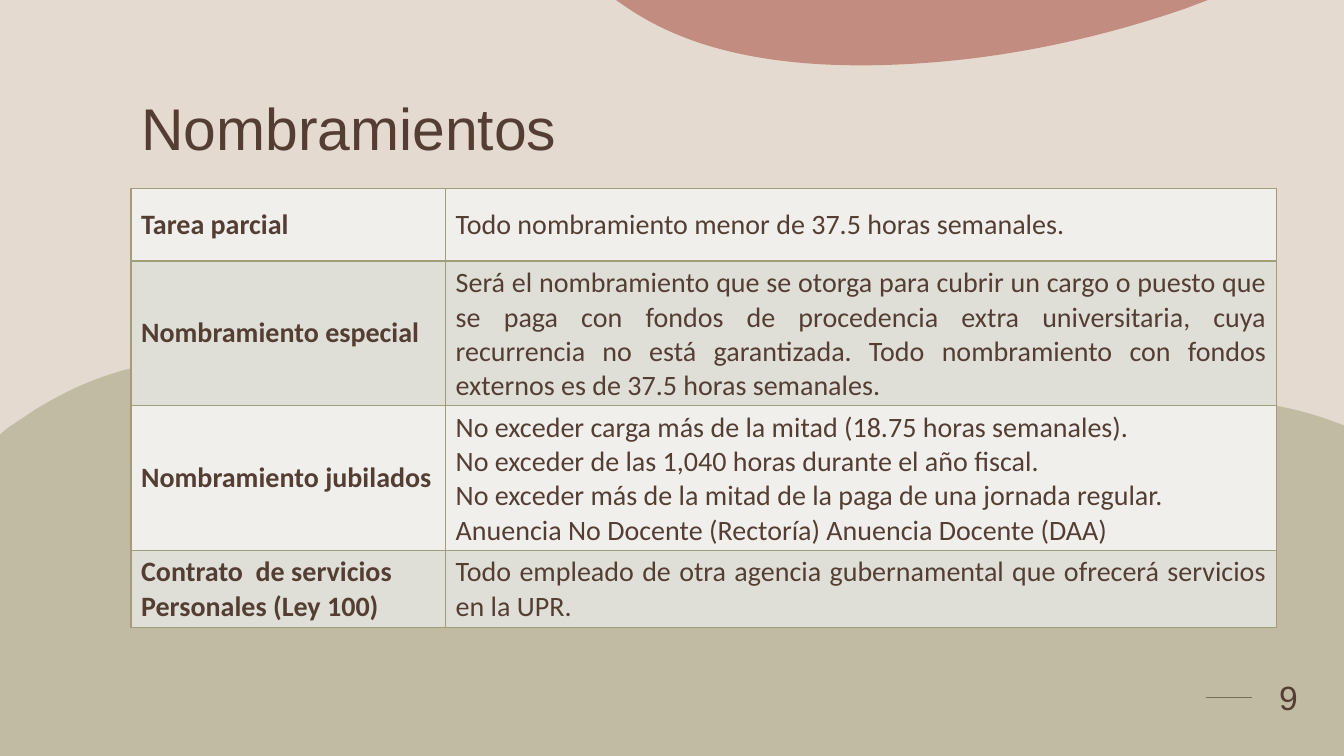
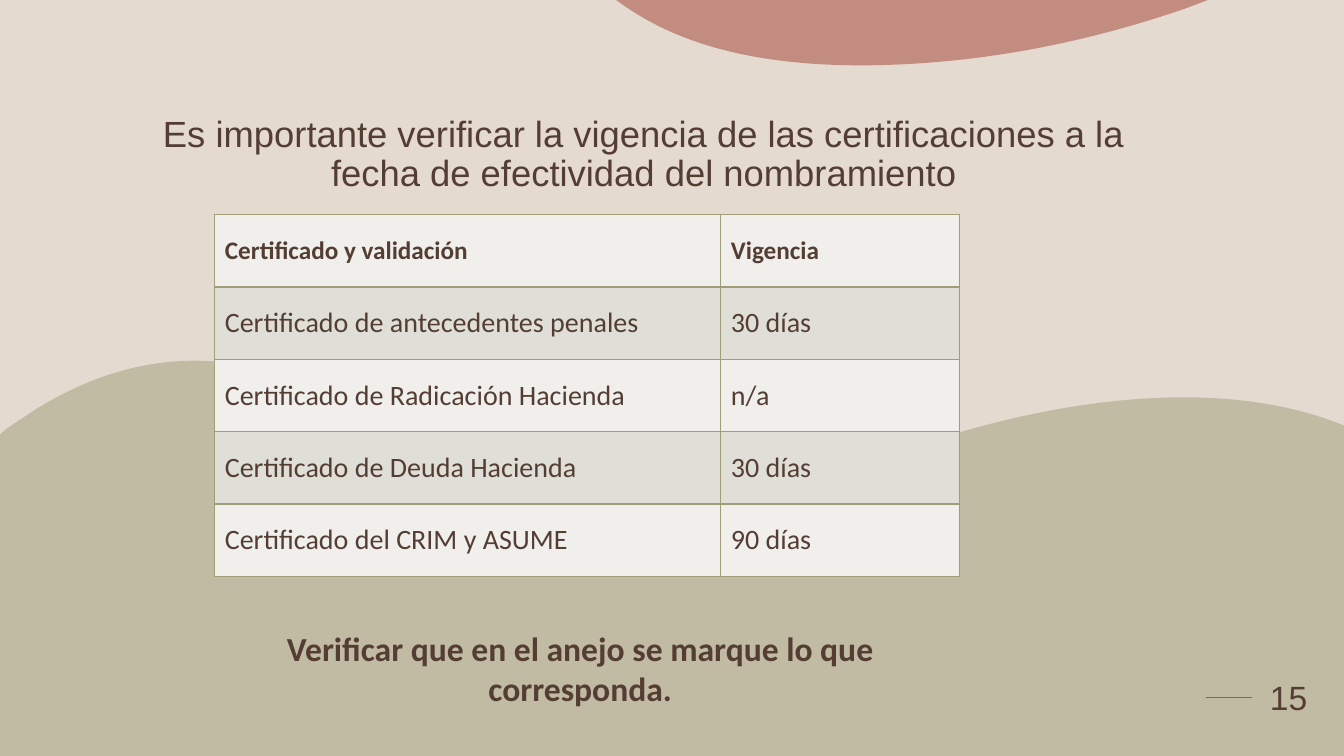
from dataclasses import dataclass

from lxml import etree
from pptx import Presentation
from pptx.dml.color import RGBColor
from pptx.enum.shapes import MSO_CONNECTOR
from pptx.enum.text import MSO_ANCHOR, MSO_AUTO_SIZE, PP_ALIGN
from pptx.oxml.ns import qn
from pptx.util import Inches, Pt

LEFT, CENTER, JUSTIFY = PP_ALIGN.LEFT, PP_ALIGN.CENTER, PP_ALIGN.JUSTIFY
TOP, MIDDLE, BOTTOM = MSO_ANCHOR.TOP, MSO_ANCHOR.MIDDLE, MSO_ANCHOR.BOTTOM
NO_AUTOFIT = MSO_AUTO_SIZE.NONE
STRAIGHT = MSO_CONNECTOR.STRAIGHT

SAND, BROWN, OLIVE, CLAY = "E5DACF", "543E34", "A09D79", "AC5B4C"
ROW_FILLS = ("F0EFEC", "DFDFD7")
HEADING_FONT, BODY_FONT = "Arial", "Calibri"
TITLE_ONLY = 5


@dataclass(frozen=True)
class Box:
    """Position and size in inches."""

    left: float
    top: float
    width: float
    height: float

    def emu(self) -> tuple:
        """Return the four lengths for python-pptx."""
        return tuple(Inches(v) for v in (self.left, self.top, self.width, self.height))


@dataclass(frozen=True)
class Style:
    """Look of a piece of text."""

    size: float
    font: str = BODY_FONT
    bold: bool = False
    align: PP_ALIGN = LEFT
    spacing: float = 1.0


@dataclass(frozen=True)
class Blob:
    """Closed outline: a start point, then line ends or cubic curves."""

    start: tuple
    segments: tuple
    height: float
    color: str
    opacity: int


@dataclass(frozen=True)
class Entry:
    """Text and style of one table cell."""

    text: str
    style: Style


LABEL = Style(20, bold=True)
PLAIN = Style(20)
JUSTIFIED = Style(20, align=JUSTIFY)
COLUMN_HEAD = Style(18, bold=True)
NUMBER = Style(24, HEADING_FONT, align=CENTER)
NOTE = Style(24, bold=True, align=CENTER)

HILLS = Blob(
    (2.02, 3.58),
    (
        (2.36, 3.59, 2.7, 3.66, 3.04, 3.79),
        (3.34, 3.9, 3.6, 4.08, 3.86, 4.25),
        (4.43, 4.62, 5.05, 4.9, 5.77, 5),
        (6.37, 5.09, 6.98, 5.03, 7.59, 4.88),
        (8.27, 4.72, 8.67, 4.57, 9.08, 4.43),
        (9.48, 4.29, 11.61, 3.57, 13.25, 4.19),
        (13.33, 4.22),
        (13.33, 7.5),
        (0, 7.5),
        (0, 4.31),
        (0.07, 4.25),
        (0.16, 4.19, 0.25, 4.13, 0.34, 4.07),
        (0.9, 3.72, 1.46, 3.56, 2.02, 3.58),
    ),
    3.92,
    OLIVE,
    50,
)
CLOUD = Blob(
    (6.11, 0),
    (
        (11.98, 0),
        (11.77, 0.08),
        (10.56, 0.5, 9.61, 0.59, 9.24, 0.62),
        (7.56, 0.75, 6.71, 0.41, 6.21, 0.07),
    ),
    0.65,
    CLAY,
    60,
)

APPOINTMENTS = (
    (Entry("Tarea parcial", LABEL),
     Entry("Todo nombramiento menor de 37.5 horas semanales.", JUSTIFIED)),
    (Entry("Nombramiento especial", LABEL),
     Entry("Será el nombramiento que se otorga para cubrir un cargo o puesto que se paga "
           "con fondos de procedencia extra universitaria, cuya recurrencia no está "
           "garantizada. Todo nombramiento con fondos externos es de 37.5 horas semanales.",
           JUSTIFIED)),
    (Entry("Nombramiento jubilados", LABEL),
     Entry("No exceder carga más de la mitad (18.75 horas semanales).\n"
           "No exceder de las 1,040 horas durante el año fiscal.\n"
           "No exceder más de la mitad de la paga de una jornada regular.\n"
           "Anuencia No Docente (Rectoría) Anuencia Docente (DAA)", PLAIN)),
    (Entry("Contrato  de servicios Personales (Ley 100)", LABEL),
     Entry("Todo empleado de otra agencia gubernamental que ofrecerá servicios en la UPR.",
           JUSTIFIED)),
)
VALIDITY = (
    ("Certificado de antecedentes penales", "30 días"),
    ("Certificado de Radicación Hacienda", "n/a"),
    ("Certificado de Deuda Hacienda", "30 días"),
    ("Certificado del CRIM y ASUME", "90 días"),
)


def rgb(color: str) -> RGBColor:
    """Turn a hex string into a colour."""
    return RGBColor.from_string(color)


def write(frame, text: str, style: Style) -> None:
    """Put styled text into a text frame."""
    frame.text = text
    for paragraph in frame.paragraphs:
        paragraph.alignment = style.align
        paragraph.line_spacing = style.spacing
        for run in paragraph.runs:
            run.font.name = style.font
            run.font.size = Pt(style.size)
            run.font.bold = style.bold
            run.font.color.rgb = rgb(BROWN)


def bend(shape, blob: Blob) -> None:
    """Turn the straight steps of an outline into its cubic curves."""
    outline = shape.element.spPr.find(f".//{qn('a:path')}")
    steps = outline.findall(qn("a:lnTo"))
    for step, segment in zip(steps, blob.segments):
        if len(segment) == 2:
            continue
        curve = etree.Element(qn("a:cubicBezTo"))
        for x, y in zip(segment[::2], segment[1::2]):
            point = etree.SubElement(curve, qn("a:pt"))
            point.set("x", str(Inches(x) - shape.left))
            point.set("y", str(Inches(y) - shape.top))
        outline.replace(step, curve)
    shape.height = Inches(blob.height)
    outline.set("h", str(shape.height))


def add_blob(slide, blob: Blob) -> None:
    """Draw a translucent background outline."""
    builder = slide.shapes.build_freeform(*(Inches(v) for v in blob.start))
    ends = [tuple(Inches(v) for v in segment[-2:]) for segment in blob.segments]
    builder.add_line_segments(ends, close=True)
    shape = builder.convert_to_shape()
    bend(shape, blob)
    shape.shadow.inherit = False
    shape.line.fill.background()
    shape.fill.solid()
    shape.fill.fore_color.rgb = rgb(blob.color)
    tint = shape.element.spPr.find(qn("a:solidFill")).find(qn("a:srgbClr"))
    etree.SubElement(tint, qn("a:alpha")).set("val", str(blob.opacity * 1000))


def add_text(slide, box: Box, text: str, style: Style, anchor: MSO_ANCHOR) -> None:
    """Add a wrapping text box."""
    frame = slide.shapes.add_textbox(*box.emu()).text_frame
    frame.word_wrap = True
    frame.vertical_anchor = anchor
    write(frame, text, style)


def add_number_rule(slide) -> None:
    """Draw the short line beside the slide number."""
    rule = slide.shapes.add_connector(
        STRAIGHT, *(Inches(v) for v in (11.96, 6.92, 12.42, 6.92)))
    rule.line.color.rgb = rgb(BROWN)
    rule.line.width = Pt(1.25)
    etree.SubElement(rule.element.spPr, qn("a:effectLst"))


def add_page(deck, title: str, title_box: Box, title_style: Style, number: int):
    """Add a slide with the shared background, title and number."""
    slide = deck.slides.add_slide(deck.slide_layouts[TITLE_ONLY])
    add_number_rule(slide)
    add_blob(slide, HILLS)
    add_blob(slide, CLOUD)
    heading = slide.shapes.title
    heading.left, heading.top, heading.width, heading.height = title_box.emu()
    frame = heading.text_frame
    frame.auto_size = NO_AUTOFIT
    frame.word_wrap = True
    frame.vertical_anchor = BOTTOM
    write(frame, title, title_style)
    add_text(slide, Box(12.42, 6.43, 0.72, 0.98), str(number), NUMBER, MIDDLE)
    return slide


def add_borders(cell) -> None:
    """Give a cell thin olive edges."""
    properties = cell._tc.get_or_add_tcPr()
    for side in ("lnL", "lnR", "lnT", "lnB"):
        edge = etree.SubElement(properties, qn(f"a:{side}"))
        edge.set("w", str(Pt(1)))
        fill = etree.SubElement(edge, qn("a:solidFill"))
        etree.SubElement(fill, qn("a:srgbClr")).set("val", OLIVE)


def add_grid(slide, box: Box, widths: tuple, row_height: float, rows: tuple) -> None:
    """Add a table with alternating row fills; rows grow with their text."""
    holder = slide.shapes.add_table(len(rows), len(widths), *box.emu())
    table = holder.table
    table.first_row = table.horz_banding = False
    for column, width in zip(table.columns, widths):
        column.width = Inches(width)
    for r, entries in enumerate(rows):
        table.rows[r].height = Inches(row_height)
        for c, entry in enumerate(entries):
            cell = table.cell(r, c)
            add_borders(cell)
            cell.fill.solid()
            cell.fill.fore_color.rgb = rgb(ROW_FILLS[r % 2])
            cell.vertical_anchor = MIDDLE
            write(cell.text_frame, entry.text, entry.style)
    holder.height = Inches(box.height)


def add_appointments(deck) -> None:
    """Build the slide on kinds of appointment."""
    slide = add_page(deck, "Nombramientos", Box(1.3, 0.67, 4.96, 1),
                     Style(42, HEADING_FONT, spacing=0.9), 9)
    add_grid(slide, Box(1.3, 1.87, 11.36, 4.35), (3.12, 8.24), 0.72, APPOINTMENTS)


def add_validity(deck) -> None:
    """Build the slide on how long certificates last."""
    slide = add_page(
        deck,
        "Es importante verificar la vigencia de las certificaciones a la fecha de "
        "efectividad del nombramiento",
        Box(1.14, 0.98, 10.5, 1),
        Style(26, HEADING_FONT, align=CENTER, spacing=0.9), 15)
    head = tuple(Entry(text, COLUMN_HEAD) for text in ("Certificado y validación", "Vigencia"))
    body = tuple(tuple(Entry(text, PLAIN) for text in row) for row in VALIDITY)
    rows = (head, *body)
    box = Box(2.13, 2.13, 7.39, 3.59)
    add_grid(slide, box, (5.02, 2.37), box.height / len(rows), rows)
    add_text(slide, Box(1.99, 6.18, 7.53, 0.5),
             "Verificar que en el anejo se marque lo que corresponda.", NOTE, TOP)


def main() -> None:
    """Build and save the presentation."""
    deck = Presentation()
    deck.slide_width, deck.slide_height = Inches(13.33), Inches(7.5)
    backdrop = deck.slide_master.background.fill
    backdrop.solid()
    backdrop.fore_color.rgb = rgb(SAND)
    add_appointments(deck)
    add_validity(deck)
    deck.save("out.pptx")


if __name__ == "__main__":
    main()
